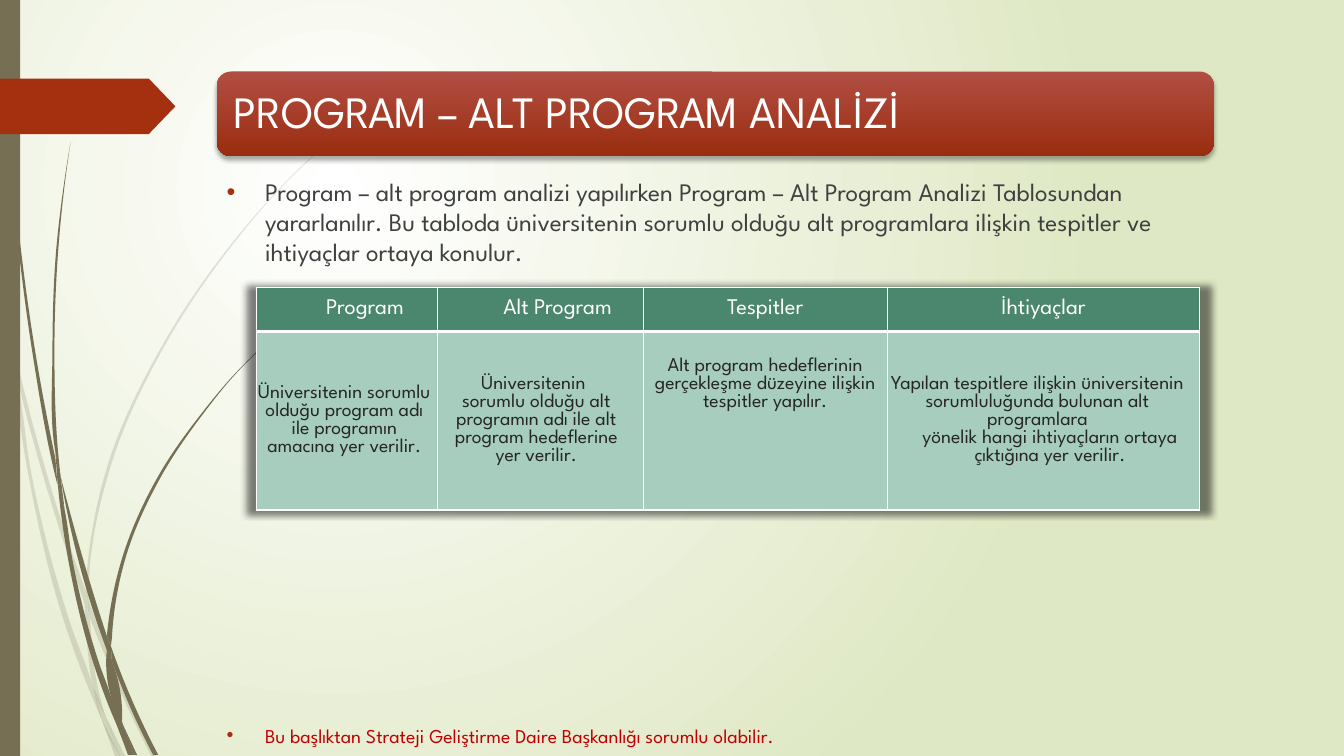
import lxml.etree
import pptx
import pptx.dml.color
import pptx.enum.shapes
import pptx.enum.text
import pptx.oxml
import pptx.oxml.ns
import pptx.util

PX = 9144
FONT = "League Spartan"
OLIVE = "766F54"
RUST = "A53010"
BORDERS = ("lnL", "lnR", "lnT", "lnB")
BODY = (
    ("Program – alt program analizi yapılırken Program – Alt Program Analizi Tablosundan yararlanılır. "
     "Bu tabloda üniversitenin sorumlu olduğu alt programlara ilişkin tespitler ve ihtiyaçlar ortaya konulur.",
     18, "404040", 0),
    ("Bu başlıktan Strateji Geliştirme Daire Başkanlığı sorumlu olabilir.", 14, "C00000", 326),
)
COLUMNS = (
    (180, "Program", 36, 0,
     [("Üniversitenin sorumlu olduğu program adı ile programın amacına yer verilir.", 0, 5)]),
    (204, "Alt Program", 34, 0,
     [("Üniversitenin", 0, 14),
      ("sorumlu olduğu alt programın adı ile alt program hedeflerine yer verilir.", 6, 14)]),
    (242, "Tespitler", 0, 26,
     [("Alt program hedeflerinin gerçekleşme düzeyine ilişkin tespitler yapılır.", 0, 0)]),
    (310, "İhtiyaçlar", 0, 0,
     [("Yapılan tespitlere ilişkin üniversitenin sorumluluğunda bulunan alt programlara", 0, 12),
      ("yönelik hangi ihtiyaçların ortaya çıktığına yer verilir.", 21, 8)]),
)
FAINT_STRANDS = (
    ([(11, 350), (9, 322), (0, 282)], [(0, 299), (10, 344), (11, 350)]),
    ([(14, 345), (62, 520), (85, 586)], [(84, 599), (58, 522), (17, 376)]),
    ([(88, 596), (92, 607), (127, 692), (155, 750)], [(150, 750), (123, 694), (88, 610)]),
    ([(105, 711), (124, 750)], [(119, 750), (105, 711)]),
    ([(11, 350), (17, 376), (31, 469), (70, 619), (93, 683), (101, 714)],
     [(92, 693), (65, 621), (28, 470), (11, 350)]),
    ([(84, 599), (87, 646), (93, 683), (105, 711)], [(103, 706), (91, 646), (88, 610), (84, 599)]),
    ([(88, 596), (88, 584), (110, 462), (160, 349), (229, 245), (268, 198), (290, 175), (312, 154)],
     [(312, 153), (289, 175), (268, 197), (228, 244), (158, 348), (107, 461), (85, 586)]),
    ([(101, 714), (114, 750)], [(119, 750), (101, 714)]),
    ([(88, 608), (88, 596), (85, 586)], [(85, 586), (84, 599)]),
    ([(93, 683), (105, 711), (119, 750)], [(119, 750), (101, 714), (93, 683)]),
)
DARK_STRANDS = (
    ([(3, 0), (4, 48), (7, 110), (17, 233), (33, 355), (56, 477), (57, 481)],
     [(55, 455), (36, 355), (19, 232), (8, 109), (5, 48), (4, 0)]),
    ([(60, 472), (88, 592), (106, 645)], [(106, 631), (93, 590), (60, 472)]),
    ([(110, 641), (136, 706), (157, 749)], [(152, 749), (132, 708), (111, 656)]),
    ([(57, 477), (64, 505), (72, 556), (98, 657), (110, 691), (117, 722)],
     [(111, 708), (93, 659), (68, 557), (57, 477)]),
    ([(60, 472), (58, 453), (54, 349), (58, 245), (63, 193), (70, 141)],
     [(70, 141), (62, 193), (56, 245), (52, 349), (55, 449), (60, 472)]),
    ([(122, 719), (136, 749)], [(133, 749), (122, 719)]),
    ([(57, 477), (64, 505)], [(60, 472), (55, 449)]),
    ([(111, 633), (125, 552), (158, 476), (205, 406), (231, 374), (261, 344)],
     [(260, 344), (231, 373), (204, 405), (156, 474), (122, 551), (106, 631)], [(106, 631), (110, 641)]),
    ([(117, 722), (127, 749)], [(131, 749), (117, 722)]),
    ([(106, 645), (110, 691), (122, 719)], [(121, 716), (111, 656), (106, 645)]),
    ([(106, 645), (111, 656)], [(110, 641), (106, 631)]),
    ([(110, 691), (122, 719), (133, 749)], [(130, 749), (117, 722), (110, 691)]),
)


def px(*lengths):
    """Turn pixel lengths into EMU."""
    return [pptx.util.Emu(round(length * PX)) for length in lengths]


def color(value):
    """Turn a hex string into a colour."""
    return pptx.dml.color.RGBColor.from_string(value)


def element(tag, parent=None, **attributes):
    """Make a drawing element, inside a parent if one is given."""
    if parent is None:
        node = pptx.oxml.parse_xml(f'<{tag} {pptx.oxml.ns.nsdecls("a")}/>')
    else:
        node = lxml.etree.SubElement(parent, pptx.oxml.ns.qn(tag))
    for key, value in attributes.items():
        node.set(key, str(value))
    return node


def hex_color(parent, value, alpha=100):
    """Add a colour element with an opacity."""
    element("a:alpha", element("a:srgbClr", parent, val=value), val=alpha * 1000)


def gradient(fill, first, last):
    """Give a fill a gradient of two colours."""
    fill.gradient()
    for stop, value, position in zip(fill.gradient_stops, (first, last), (0, 1)):
        stop.color.rgb = color(value)
        stop.position = position


def finish(shape, value, alpha=100):
    """Fill a shape plainly, without line or shadow."""
    shape.shadow.inherit = False
    shape.line.fill.background()
    shape.fill.solid()
    shape.fill.fore_color.rgb = color(value)
    if alpha < 100:
        node = shape.element.spPr.find(".//" + pptx.oxml.ns.qn("a:srgbClr"))
        element("a:alpha", node, val=alpha * 1000)


def style(paragraph, size, value):
    """Format all runs of a paragraph."""
    for run in paragraph.runs:
        run.font.name, run.font.size, run.font.bold = FONT, pptx.util.Pt(size), False
        run.font.color.rgb = color(value)
        run._r.get_or_add_rPr().set("kern", "1200")


def handles(edge):
    """Return the two curve handles of each stretch of an edge."""
    points = [complex(*point) for point in edge]
    chords = [end - start for start, end in zip(points, points[1:])]
    units = [chord / abs(chord) for chord in chords]
    ways = []
    for index in range(1, len(chords)):
        way = units[index - 1] * abs(chords[index]) + units[index] * abs(chords[index - 1])
        ways.append(way / abs(way))
    if ways:
        first = units[0] ** 2 * ways[0].conjugate()
        last = units[-1] ** 2 * ways[-1].conjugate()
        ways = [first, *ways, last]
    else:
        ways = units * 2
    return [(points[i] + ways[i] * abs(chord) / 3, points[i + 1] - ways[i + 1] * abs(chord) / 3)
            for i, chord in enumerate(chords)]


def draw_strands(slide, strands, alpha):
    """Draw grass strands, each closed from its smooth edges."""
    for edges in strands:
        points = [px(*point) for edge in edges for point in edge]
        builder = slide.shapes.build_freeform(*points[0])
        builder.add_line_segments(points[1:], close=True)
        strand = builder.convert_to_shape()
        finish(strand, OLIVE, alpha)
        curves = []
        for edge in edges:
            curves += [*handles(edge), None]
        for line, pair in zip(list(strand.element.iter(pptx.oxml.ns.qn("a:lnTo"))), curves):
            if pair:
                curve = element("a:cubicBezTo")
                for handle in pair:
                    x, y = px(handle.real, handle.imag)
                    element("a:pt", curve, x=x - strand.left, y=y - strand.top)
                curve.append(line[0])
                line.getparent().replace(line, curve)


def draw_backdrop(slide, height):
    """Draw the radial background, the grass, the side bar and the arrow tag."""
    gradient(slide.background.fill, "FFFFFF", "DFE8C4")
    fill = slide.element.find(".//" + pptx.oxml.ns.qn("a:gradFill"))
    fill.remove(fill.find(pptx.oxml.ns.qn("a:lin")))
    circle = element("a:path", fill, path="circle")
    element("a:fillToRect", circle, l=50000, t=50000, r=100000, b=100000)
    draw_strands(slide, FAINT_STRANDS, 20)
    draw_strands(slide, DARK_STRANDS, 100)
    kinds = pptx.enum.shapes.MSO_SHAPE
    finish(slide.shapes.add_shape(kinds.RECTANGLE, *px(0, 0, 20, height)), OLIVE)
    tag = slide.shapes.add_shape(kinds.PENTAGON, *px(0, 78, 174, 55))
    tag.adjustments[0] = 0.48
    finish(tag, RUST)


def draw_title(slide, left, top, width, height):
    """Draw the shaded banner and its title."""
    banner = slide.shapes.add_shape(pptx.enum.shapes.MSO_SHAPE.ROUNDED_RECTANGLE, *px(left, top, width, height))
    finish(banner, RUST)
    gradient(banner.fill, "B14E43", "9A2D0F")
    banner.fill.gradient_angle = 270
    effects = banner.element.spPr.find(pptx.oxml.ns.qn("a:effectLst"))
    shadow = element("a:outerShdw", effects, blurRad=44450, dist=27940, dir=5400000, rotWithShape=0)
    hex_color(shadow, "000000", 32)
    frame = slide.shapes.add_textbox(*px(left + 4, top + 4, width - 8, height - 8)).text_frame
    frame.word_wrap = True
    frame.vertical_anchor = pptx.enum.text.MSO_ANCHOR.MIDDLE
    frame.margin_left = frame.margin_top = frame.margin_right = frame.margin_bottom = px(13)[0]
    frame.text = "PROGRAM – ALT PROGRAM ANALİZİ"
    frame.paragraphs[0].line_spacing = 0.9
    style(frame.paragraphs[0], 32, "FFFFFF")


def draw_body(slide, *box):
    """Write the bulleted text around the table."""
    frame = slide.shapes.add_textbox(*px(*box)).text_frame
    frame.word_wrap = True
    frame.text = "\n".join(text for text, *_ in BODY)
    for paragraph, (_, size, value, gap) in zip(frame.paragraphs, BODY):
        paragraph.space_before = pptx.util.Pt(gap)
        style(paragraph, size, value)
        properties = paragraph._p.get_or_add_pPr()
        properties.set("marL", str(38 * PX))
        properties.set("indent", str(-38 * PX))
        element("a:srgbClr", element("a:buClr", properties), val=RUST)
        element("a:buFont", properties, typeface="Arial")
        element("a:buChar", properties, char="•")


def fill_cell(cell, paragraphs, size, value, fill, thick):
    """Write, fill and border one cell; thick names its heavy side."""
    cell.margin_left = cell.margin_right = cell.margin_top = cell.margin_bottom = 0
    cell.vertical_anchor = pptx.enum.text.MSO_ANCHOR.MIDDLE
    cell.text_frame.text = "\n".join(text for text, *_ in paragraphs)
    for paragraph, (_, left, right) in zip(cell.text_frame.paragraphs, paragraphs):
        paragraph.alignment = pptx.enum.text.PP_ALIGN.CENTER
        properties = paragraph._p.get_or_add_pPr()
        properties.set("marL", str(left * PX))
        properties.set("marR", str(right * PX))
        style(paragraph, size, value)
    cell.fill.solid()
    cell.fill.fore_color.rgb = color(fill)
    for index, side in enumerate(BORDERS):
        border = element("a:" + side, w=(3 if side == thick else 1) * 12700)
        hex_color(element("a:solidFill", border), "FFFFFF")
        cell._tc.tcPr.insert(index, border)


def draw_table(slide, left, top, width, height):
    """Draw the analysis table with a soft shadow."""
    table = slide.shapes.add_table(2, len(COLUMNS), *px(left, top, width, height)).table
    table.first_row = table.horz_banding = False
    table.rows[0].height, table.rows[1].height = px(44, height - 44)
    effects = element("a:effectLst")
    shadow = element("a:outerShdw", effects, blurRad=63500, sx=102000, sy=102000, algn="ctr", rotWithShape=0)
    hex_color(shadow, "000000", 50)
    table._tbl.tblPr.insert(0, effects)
    for index, (column_width, heading, indent, drop, paragraphs) in enumerate(COLUMNS):
        table.columns[index].width = px(column_width)[0]
        fill_cell(table.cell(0, index), [(heading, indent, 0)], 16, "FFFFFF", "4B866E", "lnB")
        cell = table.cell(1, index)
        fill_cell(cell, paragraphs, 14, "262626", "A6CDBD", "lnT")
        if drop:
            cell.vertical_anchor = pptx.enum.text.MSO_ANCHOR.TOP
            cell.margin_top = px(drop)[0]


def main():
    """Build the slide and save it."""
    presentation = pptx.Presentation()
    presentation.slide_width, presentation.slide_height = px(1333, 750)
    slide = presentation.slides.add_slide(presentation.slide_layouts[6])
    draw_backdrop(slide, 750)
    draw_body(slide, 215, 170, 975, 580)
    draw_title(slide, 215, 71, 989, 84)
    draw_table(slide, 254, 285, 936, 221)
    presentation.save("out.pptx")


if __name__ == "__main__":
    main()
